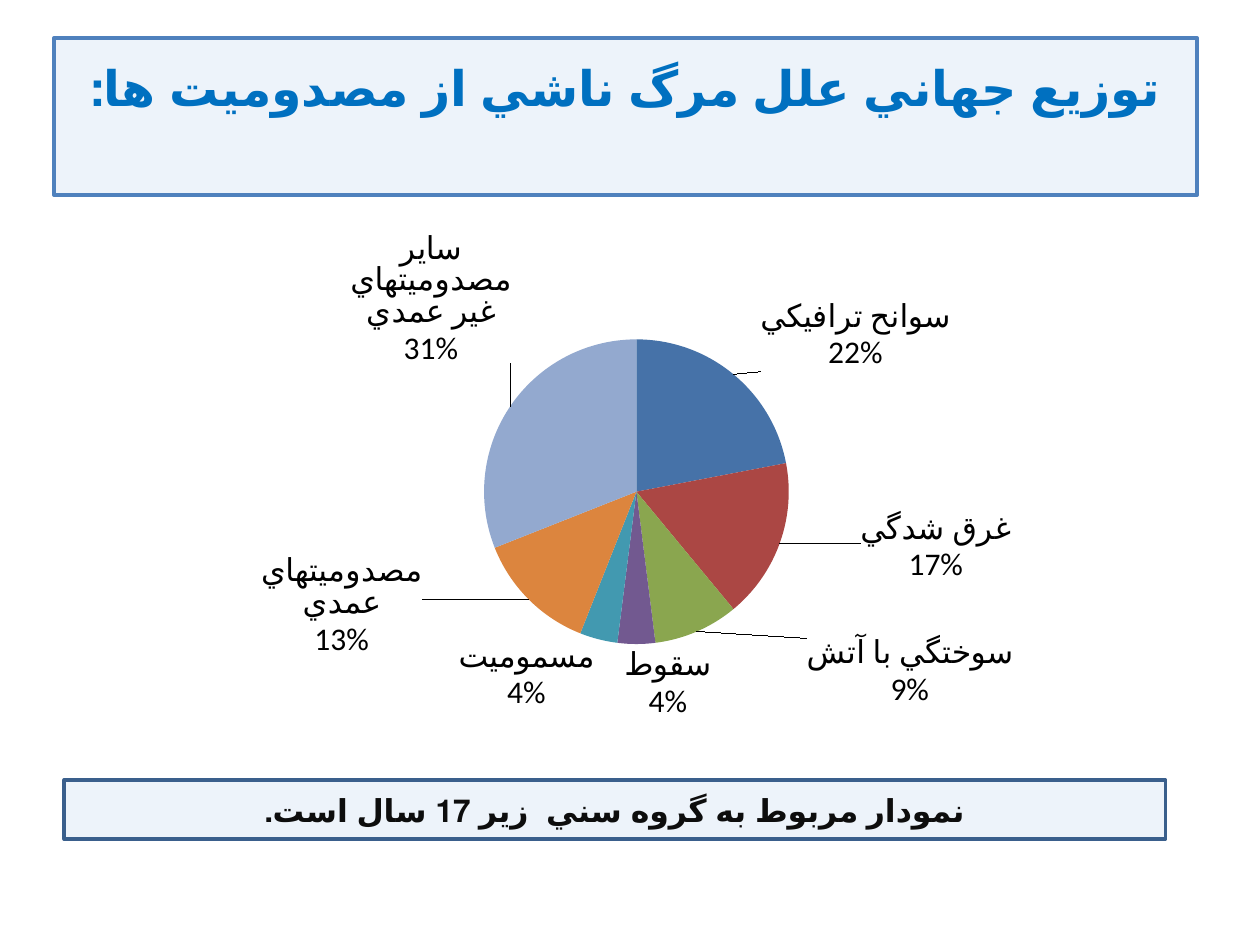
from lxml import etree
from pptx import Presentation
from pptx.chart.data import CategoryChartData
from pptx.dml.color import RGBColor
from pptx.enum.chart import XL_CHART_TYPE as ChartType, XL_LABEL_POSITION as LabelPos
from pptx.enum.shapes import MSO_SHAPE as Shape
from pptx.enum.text import MSO_ANCHOR as Anchor, PP_ALIGN as Align
from pptx.oxml import parse_xml
from pptx.oxml.ns import nsdecls, qn
from pptx.util import Inches, Pt

COLORS = {
    "panel": "C6D9F1", "title": "0070C0", "title_line": "4F81BD",
    "note": "0D0D0D", "note_line": "3A5F8C", "label": "000000",
}
FONT = "Calibri"
C15 = "http://schemas.microsoft.com/office/drawing/2012/chart"
CAUSES = [
    ("سوانح ترافيكي", 22, "4672A8", (0.021, 0.006), None),
    ("غرق شدگي", 17, "AB4744", (0.07, -0.06), None),
    ("سوختگي با آتش", 9, "8AA64F", (0.101, 0), (0.14, 0.2)),
    ("سقوط", 4, "725990", (0.03, -0.001), None),
    ("مسموميت", 4, "4299B0", (-0.002, -0.008), None),
    ("مصدوميتهاي عمدي", 13, "DC853E", (-0.096, -0.091), None),
    ("ساير مصدوميتهاي غير عمدي", 31, "93A9CF", (0.007, -0.074), None),
]


def manual_layout(x, y, size=None):
    target, modes, extent = "", "", ""
    if size:
        target = '<c:layoutTarget val="inner"/>'
        modes = '<c:xMode val="edge"/><c:yMode val="edge"/>'
        extent = f'<c:w val="{size[0]}"/><c:h val="{size[1]}"/>'
    return parse_xml(
        f'<c:layout {nsdecls("c")}><c:manualLayout>{target}{modes}'
        f'<c:x val="{x}"/><c:y val="{y}"/>{extent}</c:manualLayout></c:layout>'
    )


def label_size(width, height):
    return parse_xml(
        f'<c:extLst {nsdecls("c")}><c:ext uri="{{CE6537A1-D6FC-4f65-9D91-7224C49458BB}}" '
        f'xmlns:c15="{C15}"><c15:layout><c:manualLayout><c:w val="{width}"/>'
        f'<c:h val="{height}"/></c:manualLayout></c15:layout></c:ext></c:extLst>'
    )


class SlideBuilder:
    def __init__(self, slide):
        self.slide = slide

    def style_font(self, font, size, color, bold=False):
        font.name, font.size, font.bold = FONT, Pt(size), bold
        font.color.rgb = RGBColor.from_string(COLORS[color])

    def panel(self, shape, text, size, color, line, width):
        shape.fill.solid()
        shape.fill.fore_color.rgb = RGBColor.from_string(COLORS["panel"])
        tint = shape.fill._xPr.find(qn("a:solidFill"))[0]
        etree.SubElement(tint, qn("a:alpha"), val="30000")
        shape.line.color.rgb = RGBColor.from_string(COLORS[line])
        shape.line.width = Pt(width)
        frame = shape.text_frame
        frame.text = text
        frame.word_wrap = True
        frame.vertical_anchor = Anchor.MIDDLE
        paragraph = frame.paragraphs[0]
        paragraph.alignment = Align.CENTER
        paragraph._p.get_or_add_pPr().set("rtl", "1")
        self.style_font(paragraph.font, size, color, True)
        for run in paragraph.runs:
            run._r.get_or_add_rPr().set("lang", "fa-IR")

    def title(self, text, box):
        heading = self.slide.shapes.title
        heading.left, heading.top, heading.width, heading.height = map(Inches, box)
        self.panel(heading, text, 28, "title", "title_line", 2)

    def note(self, text, box):
        banner = self.slide.shapes.add_shape(Shape.RECTANGLE, *map(Inches, box))
        banner.shadow.inherit = False
        self.panel(banner, text, 18, "note", "note_line", 2)

    def pie(self, causes, box):
        data = CategoryChartData()
        data.categories = [name for name, *_ in causes]
        data.add_series("Series 1", [share for _, share, *_ in causes])
        chart = self.slide.shapes.add_chart(ChartType.PIE, *map(Inches, box), data).chart
        chart.has_title = chart.has_legend = False
        self.style_font(chart.font, 10, "label")
        plot = chart.plots[0]
        plot.vary_by_categories = True
        area = plot._element.getparent()
        for old in area.findall(qn("c:layout")):
            area.remove(old)
        area.insert(0, manual_layout(0.351, 0.2, (0.29, 0.58)))

        series = plot.series[0]
        labels = series.data_labels
        labels.show_value = False
        labels.show_category_name = labels.show_percentage = True
        labels.number_format, labels.number_format_is_linked = "0%", False
        labels.position = LabelPos.OUTSIDE_END
        self.style_font(labels.font, 18, "label")
        for index, (_, _, color, offset, size) in enumerate(causes):
            point = series.points[index]
            point.format.fill.solid()
            point.format.fill.fore_color.rgb = RGBColor.from_string(color)
            point.data_label.position = LabelPos.OUTSIDE_END
            self.style_font(point.data_label.font, 18, "label")
            label = labels._element.findall(qn("c:dLbl"))[-1]
            label.find(qn("c:idx")).addnext(manual_layout(*offset))
            for flag, state in (("showVal", "0"), ("showCatName", "1"), ("showPercent", "1")):
                label.find(qn(f"c:{flag}")).set("val", state)
            if size:
                label.append(label_size(*size))
        for bubble in labels._element.findall(".//" + qn("c:showBubbleSize")):
            bubble.addnext(parse_xml(f'<c:separator {nsdecls("c")}>\n</c:separator>'))


def main():
    deck = Presentation()
    deck.slide_width, deck.slide_height = Inches(10), Inches(7.5)
    builder = SlideBuilder(deck.slides.add_slide(deck.slide_layouts[5]))
    builder.title("توزيع جهاني علل مرگ ناشي از مصدوميت ها:\v", (0.43, 0.3, 9.07, 1.25))
    builder.note("نمودار مربوط به گروه سني  زير 17 سال است.", (0.51, 6.19, 8.74, 0.47))
    builder.pie(CAUSES, (0.91, 1.86, 8.35, 4.17))
    deck.save("out.pptx")


if __name__ == "__main__":
    main()
